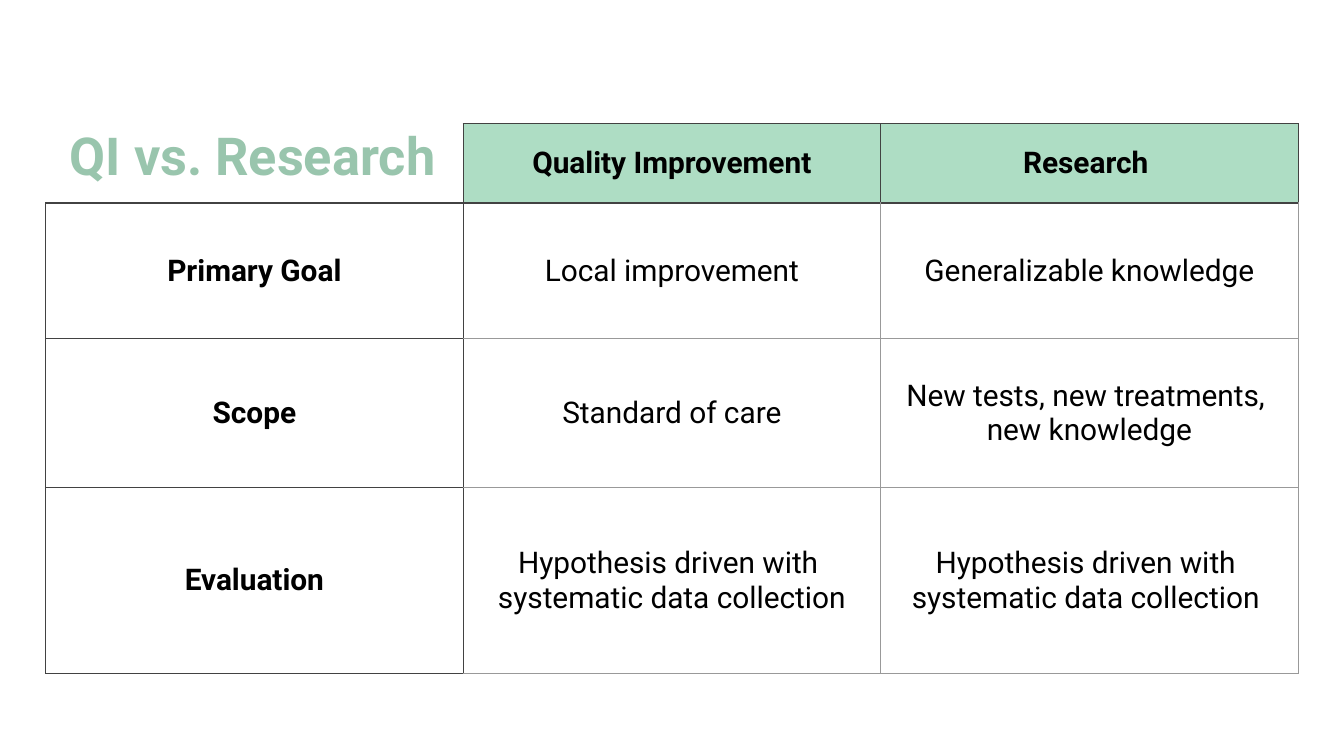
from lxml.etree import SubElement
from pptx import Presentation
from pptx.dml.color import RGBColor
from pptx.enum.text import MSO_ANCHOR, PP_ALIGN
from pptx.oxml.ns import qn
from pptx.util import Inches, Pt

WHITE = RGBColor(0xFF, 0xFF, 0xFF)
BLACK = RGBColor(0x00, 0x00, 0x00)
MINT = RGBColor(0xAE, 0xDD, 0xC4)
SAGE = RGBColor(0x99, 0xC5, 0xAD)
DARK = RGBColor(0x42, 0x42, 0x42)
GREY = RGBColor(0x99, 0x99, 0x99)
FONT = "Roboto"
MARGIN = Inches(0.1)

ROW_HEIGHTS = [0.59, 1.01, 1.11, 1.38]
COMPARISON = [
    ["", "Quality Improvement", "Research "],
    ["Primary Goal", "Local improvement", "Generalizable knowledge"],
    ["Scope", "Standard of care", "New tests, new treatments, \vnew knowledge"],
    [
        "Evaluation",
        "Hypothesis driven with \vsystematic data collection",
        "Hypothesis driven with \vsystematic data collection ",
    ],
]


def set_margins(frame):
    frame.margin_left = frame.margin_right = MARGIN
    frame.margin_top = frame.margin_bottom = MARGIN


def style_font(para, size, color, bold):
    para.font.name = FONT
    para.font.size = Pt(size)
    para.font.color.rgb = color
    para.font.bold = bold


def edge_colors(row, column):
    if row == column == 0:
        return {"L": None, "R": DARK, "T": None, "B": DARK}
    heading = row == 0 or column == 0
    return {
        "L": DARK if heading or column == 1 else GREY,
        "R": DARK if heading else GREY,
        "T": DARK if heading or row == 1 else GREY,
        "B": DARK if heading else GREY,
    }


def draw_borders(cell, colors):
    properties = cell._tc.get_or_add_tcPr()
    for side, color in colors.items():
        line = SubElement(properties, qn(f"a:ln{side}"), w=str(Pt(0.75)))
        if color is None:
            SubElement(line, qn("a:noFill"))
        else:
            fill = SubElement(line, qn("a:solidFill"))
            SubElement(fill, qn("a:srgbClr"), val=str(color))


def fill_cell(cell, row, column):
    if row == 0 and column > 0:
        cell.fill.solid()
        cell.fill.fore_color.rgb = MINT
    elif column == 0:
        cell.fill.solid()
        cell.fill.fore_color.rgb = WHITE
    else:
        cell.fill.background()


def add_comparison(page, left, top, width):
    columns = len(COMPARISON[0])
    table = page.shapes.add_table(
        len(COMPARISON), columns, left, top, width, Inches(sum(ROW_HEIGHTS))
    ).table
    table.first_row = table.horz_banding = False
    for column in table.columns:
        column.width = width // columns
    for row, (height, texts) in enumerate(zip(ROW_HEIGHTS, COMPARISON)):
        table.rows[row].height = Inches(height)
        for column, text in enumerate(texts):
            cell = table.cell(row, column)
            set_margins(cell)
            cell.vertical_anchor = MSO_ANCHOR.MIDDLE
            draw_borders(cell, edge_colors(row, column))
            fill_cell(cell, row, column)
            cell.text_frame.text = text
            para = cell.text_frame.paragraphs[0]
            para.alignment = PP_ALIGN.CENTER
            style_font(para, 16, BLACK, row == 0 or column == 0)


def place_title(page, left, top, width, height):
    title = page.shapes.title
    title.left, title.top, title.width, title.height = left, top, width, height
    frame = title.text_frame
    frame.text = "QI vs. Research"
    frame.word_wrap = True
    frame.vertical_anchor = MSO_ANCHOR.TOP
    set_margins(frame)
    para = frame.paragraphs[0]
    para.alignment = PP_ALIGN.LEFT
    style_font(para, 28, SAGE, True)
    title.element.getparent().append(title.element)


def main():
    deck = Presentation()
    deck.slide_width = Inches(10)
    deck.slide_height = deck.slide_width * 9 // 16
    page = deck.slides.add_slide(deck.slide_layouts[5])
    page.background.fill.solid()
    page.background.fill.fore_color.rgb = WHITE
    width = Inches(9.32)
    add_comparison(page, (deck.slide_width - width) // 2, Inches(0.92), width)
    place_title(page, Inches(0.42), Inches(0.82), width, Inches(0.63))
    deck.save("out.pptx")


if __name__ == "__main__":
    main()
